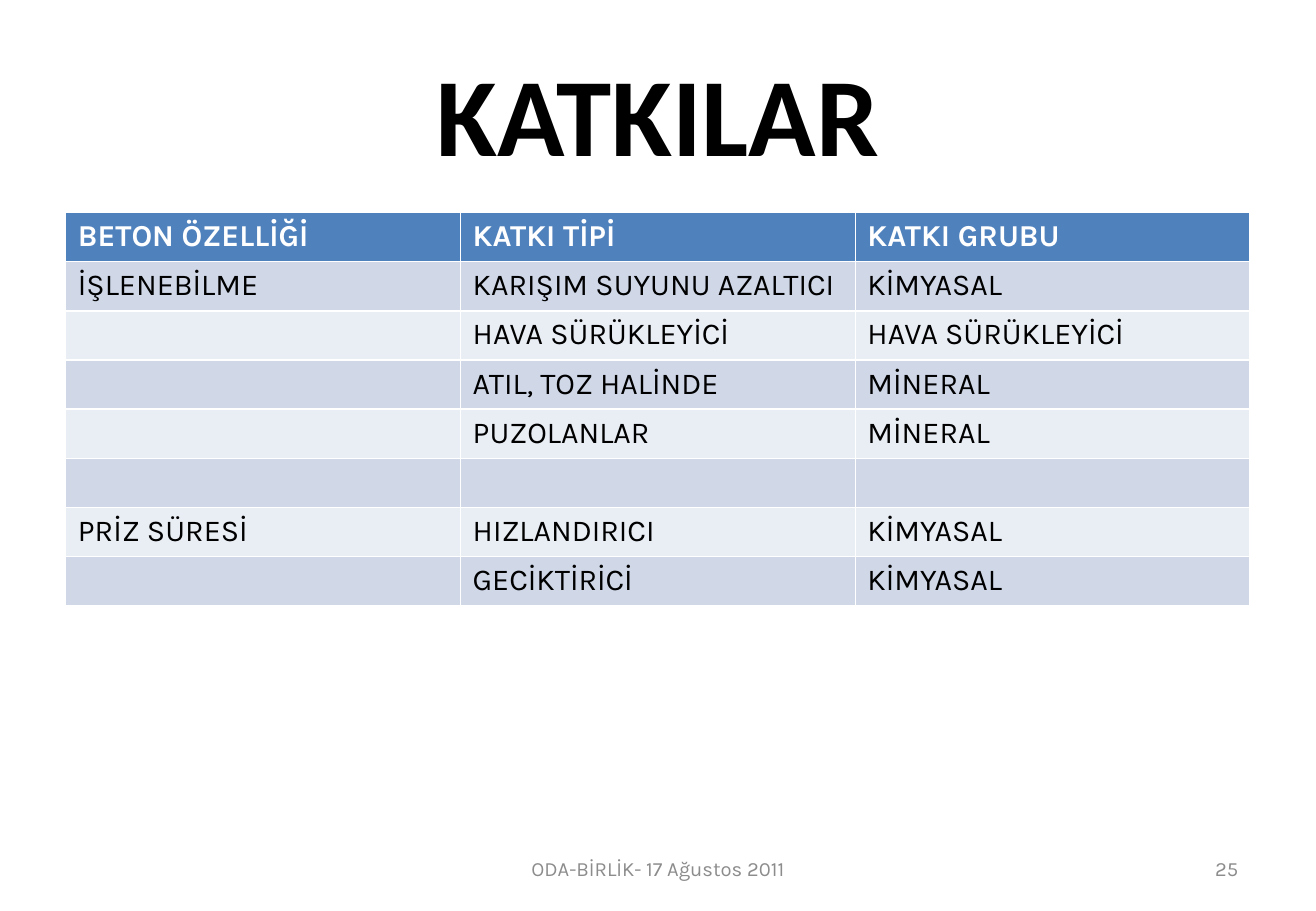
from pptx import Presentation
from pptx import util as u
from pptx.dml.color import RGBColor
from pptx.enum import text

WIDTH, HEIGHT = u.Inches(10.83), u.Inches(7.5)
MARGIN, CONTENT = 0.05, 0.9  # shares of the slide's width

COLORS = {
    "ink": "000000",
    "header_text": "FFFFFF",
    "footer_text": "8C8C8C",
    "header": "4F81BD",
    "odd_row": "D0D8E8",
    "even_row": "E9EDF4",
}

ADMIXTURES = [
    ("BETON ÖZELLİĞİ", "KATKI TİPİ", "KATKI GRUBU"),
    ("İŞLENEBİLME", "KARIŞIM SUYUNU AZALTICI", "KİMYASAL"),
    ("", "HAVA SÜRÜKLEYİCİ", "HAVA SÜRÜKLEYİCİ"),
    ("", "ATIL, TOZ HALİNDE", "MİNERAL"),
    ("", "PUZOLANLAR", "MİNERAL"),
    ("", "", ""),
    ("PRİZ SÜRESİ", "HIZLANDIRICI", "KİMYASAL"),
    ("", "GECİKTİRİCİ", "KİMYASAL"),
]


def region(left, top, width, height):
    """Turn shares of the slide's size into lengths."""
    return (round(left * WIDTH), round(top * HEIGHT),
            round(width * WIDTH), round(height * HEIGHT))


def style_font(font, color, **values):
    for name, value in values.items():
        setattr(font, name, value)
    font.color.rgb = RGBColor.from_string(COLORS[color])


def add_line(page, box, words, align, color, **values):
    frame = page.shapes.add_textbox(*box).text_frame
    frame.word_wrap = True
    frame.vertical_anchor = text.MSO_ANCHOR.MIDDLE
    para = frame.paragraphs[0]
    para.alignment = align
    span = para.add_run()
    span.text = words
    style_font(span.font, color, **values)


def add_admixture_table(page, box, rows):
    table = page.shapes.add_table(len(rows), len(rows[0]), *box).table
    for index, row in enumerate(rows):
        is_header = index == 0
        fill = "header" if is_header else "odd_row" if index % 2 else "even_row"
        for cell, words in zip(table.rows[index].cells, row):
            cell.fill.solid()
            cell.fill.fore_color.rgb = RGBColor.from_string(COLORS[fill])
            cell.text = words
            style_font(cell.text_frame.paragraphs[0].font if not words
                       else cell.text_frame.paragraphs[0].runs[0].font,
                       "header_text" if is_header else "ink",
                       name="Karla", size=u.Pt(18), bold=is_header)


def add_footer(page, box, words, number):
    """Centre the words on the slide and end the number at the box's right edge."""
    for content, align in ((words, text.PP_ALIGN.CENTER), (number, text.PP_ALIGN.RIGHT)):
        add_line(page, box, content, align, "footer_text", name="Karla", size=u.Pt(12))


def main():
    deck = Presentation()
    deck.slide_width, deck.slide_height = WIDTH, HEIGHT
    page = deck.slides.add_slide(deck.slide_layouts[6])
    add_line(page, region(MARGIN, 0.04, CONTENT, 1 / 6), "KATKILAR",
             text.PP_ALIGN.CENTER, "ink", name="Calibri", size=u.Pt(66), bold=True)
    add_admixture_table(page, region(MARGIN, 0.2333, CONTENT, 0.432), ADMIXTURES)
    add_footer(page, region(MARGIN, 0.9267, CONTENT, 0.0533),
               "ODA-BİRLİK- 17 Ağustos 2011", "25")
    deck.save("out.pptx")


if __name__ == "__main__":
    main()
